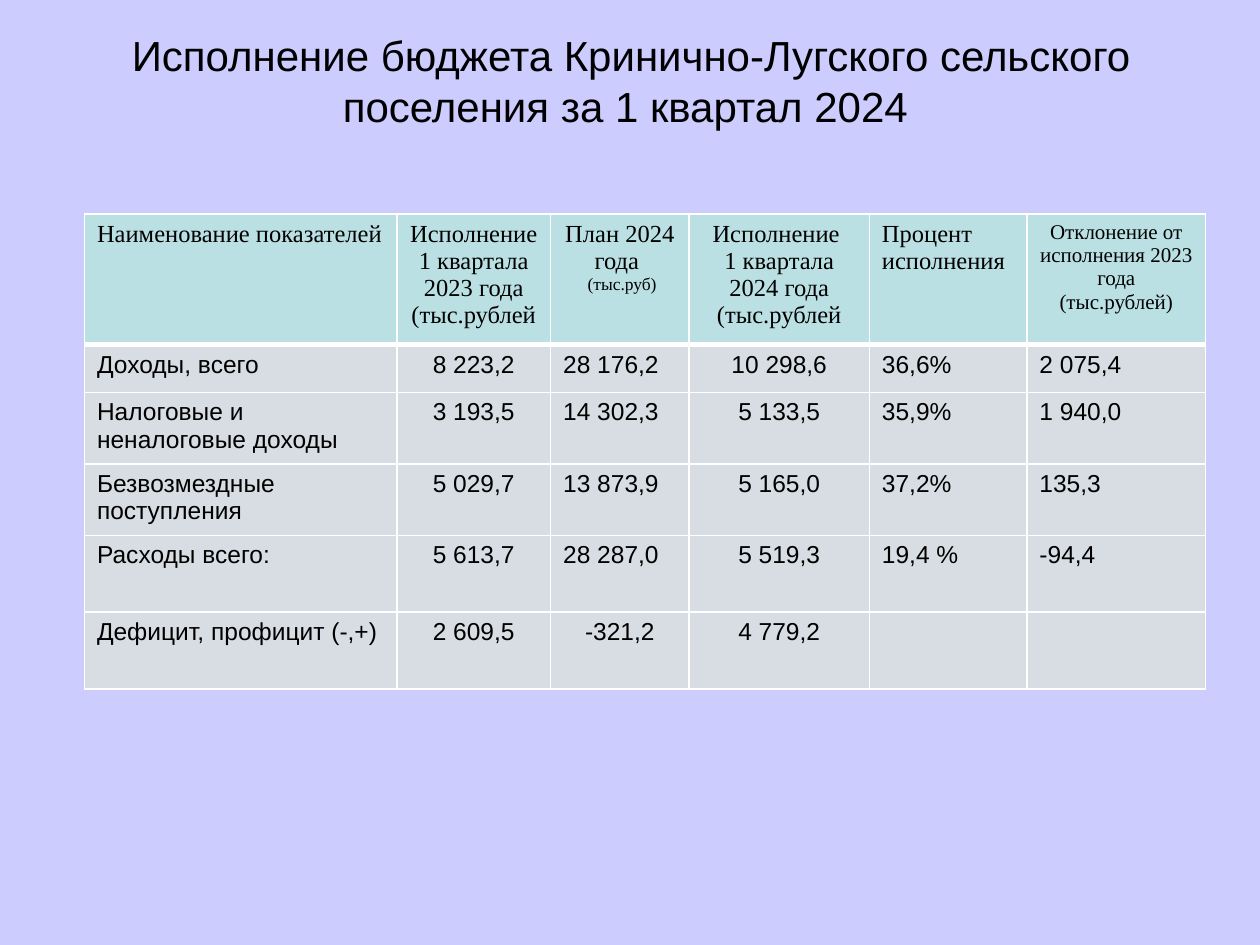
from dataclasses import dataclass

from lxml import etree
from pptx import Presentation
from pptx.dml.color import RGBColor
from pptx.enum.text import MSO_ANCHOR, PP_ALIGN
from pptx.oxml.ns import qn
from pptx.util import Inches, Pt

LEFT, CENTER = PP_ALIGN.LEFT, PP_ALIGN.CENTER
MIDDLE = MSO_ANCHOR.MIDDLE
SANS, SERIF = "Arial", "Times New Roman"
BACKGROUND, HEADER_FILL, BODY_FILL = "CCCCFF", "BBE0E3", "D8DDE3"
BORDER, INK = "FFFFFF", "000000"
HEADER_BORDER, THIN_BORDER = 3, 1


@dataclass
class Column:
    width: float
    heading: list[str]
    heading_align: PP_ALIGN = CENTER
    heading_sizes: tuple[int, ...] = (14,)
    body_align: PP_ALIGN = LEFT


@dataclass
class Row:
    height: float
    values: list[str]


COLUMNS = [
    Column(2.48, ["Наименование показателей"], heading_align=LEFT),
    Column(1.22, ["Исполнение ", "1 квартала 2023 года", "(тыс.рублей"], body_align=CENTER),
    Column(1.1, ["План 2024 года ", " (тыс.руб)"], heading_sizes=(14, 10)),
    Column(1.43, ["Исполнение ", "1 квартала 2024 года", "(тыс.рублей"], body_align=CENTER),
    Column(1.25, ["Процент исполнения"], heading_align=LEFT),
    Column(1.42, ["Отклонение от исполнения 2023 года (тыс.рублей)"], heading_sizes=(12,)),
]
HEADER_HEIGHT = 0.96
ROWS = [
    Row(0.38, ["Доходы, всего", "8 223,2", "28 176,2", "10 298,6", "36,6%", "2 075,4"]),
    Row(0.54, ["Налоговые и неналоговые доходы", "3 193,5", "14 302,3", "5 133,5", "35,9%", "1 940,0"]),
    Row(0.54, ["Безвозмездные поступления", "5 029,7", "13 873,9", "5 165,0", "37,2%", "135,3"]),
    Row(0.61, ["Расходы всего:", "5 613,7", "28 287,0", "5 519,3", "19,4 %", "-94,4"]),
    Row(0.61, ["Дефицит, профицит (-,+)", "2 609,5", "-321,2", "4 779,2", "", ""]),
]


def color(value: str) -> RGBColor:
    return RGBColor.from_string(value)


def write(frame, lines: list[str], *, sizes: tuple[int, ...] = (14,), font: str = SANS,
          align: PP_ALIGN = LEFT) -> None:
    """Write one paragraph per line; the last size serves all further lines."""
    for index, line in enumerate(lines):
        para = frame.paragraphs[0] if index == 0 else frame.add_paragraph()
        para.alignment = align
        if not line:
            continue
        span = para.add_run()
        span.text = line
        span.font.name = font
        span.font.size = Pt(sizes[min(index, len(sizes) - 1)])
        span.font.color.rgb = color(INK)


def style_cell(cell, fill: str, top: int, bottom: int) -> None:
    properties = cell._tc.get_or_add_tcPr()
    widths = {"a:lnL": THIN_BORDER, "a:lnR": THIN_BORDER, "a:lnT": top, "a:lnB": bottom}
    for side, width in widths.items():
        line = etree.SubElement(properties, qn(side), w=str(Pt(width)))
        solid = etree.SubElement(line, qn("a:solidFill"))
        etree.SubElement(solid, qn("a:srgbClr"), val=BORDER)
    cell.fill.solid()
    cell.fill.fore_color.rgb = color(fill)


def add_title(page, text: str) -> None:
    box = page.shapes.add_textbox(Inches(0.51), Inches(0.28), Inches(9), Inches(0.71))
    frame = box.text_frame
    frame.word_wrap = True
    frame.vertical_anchor = MIDDLE
    write(frame, [text], sizes=(24,), align=CENTER)


def add_budget_table(page) -> None:
    heights = [HEADER_HEIGHT] + [row.height for row in ROWS]
    table = page.shapes.add_table(
        len(heights), len(COLUMNS), Inches(0.67), Inches(1.7),
        Inches(sum(column.width for column in COLUMNS)), Inches(sum(heights)),
    ).table
    table.horz_banding = False
    for table_row, height in zip(table.rows, heights):
        table_row.height = Inches(height)

    for column_index, column in enumerate(COLUMNS):
        table.columns[column_index].width = Inches(column.width)

        # Heading
        cell = table.cell(0, column_index)
        style_cell(cell, HEADER_FILL, THIN_BORDER, HEADER_BORDER)
        write(cell.text_frame, column.heading, sizes=column.heading_sizes,
              font=SERIF, align=column.heading_align)

        # Values
        for row_index, row in enumerate(ROWS, start=1):
            cell = table.cell(row_index, column_index)
            top = HEADER_BORDER if row_index == 1 else THIN_BORDER
            style_cell(cell, BODY_FILL, top, THIN_BORDER)
            is_deficit_plan = row is ROWS[-1] and column_index == 2
            align = CENTER if is_deficit_plan else column.body_align
            write(cell.text_frame, [row.values[column_index]], align=align)


def main() -> None:
    deck = Presentation()
    deck.slide_width, deck.slide_height = Inches(10), Inches(7.5)
    page = deck.slides.add_slide(deck.slide_layouts[6])
    page.background.fill.solid()
    page.background.fill.fore_color.rgb = color(BACKGROUND)

    add_title(page, "Исполнение бюджета Кринично-Лугского сельского поселения за 1 квартал 2024 ")
    add_budget_table(page)
    deck.save("out.pptx")


if __name__ == "__main__":
    main()
